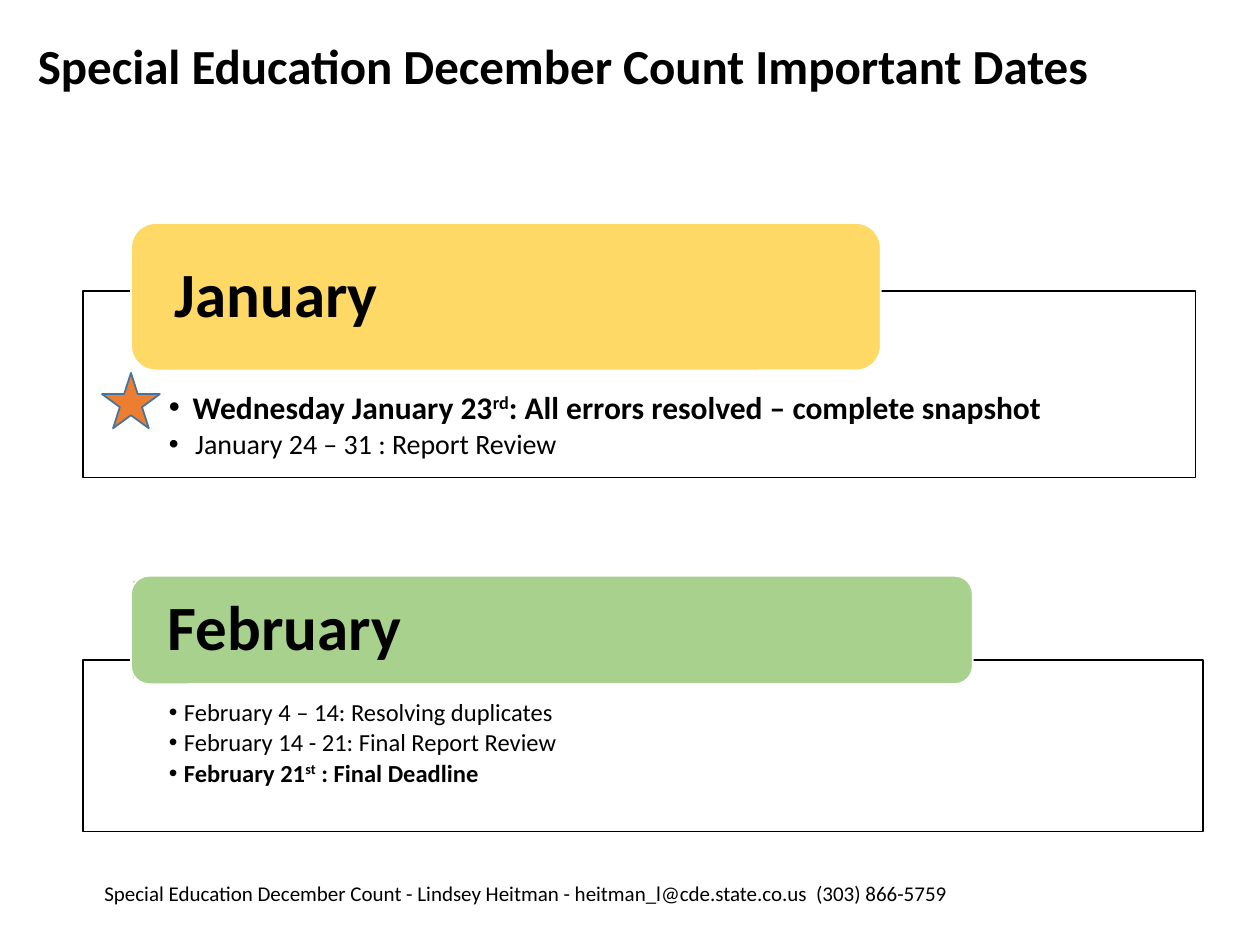
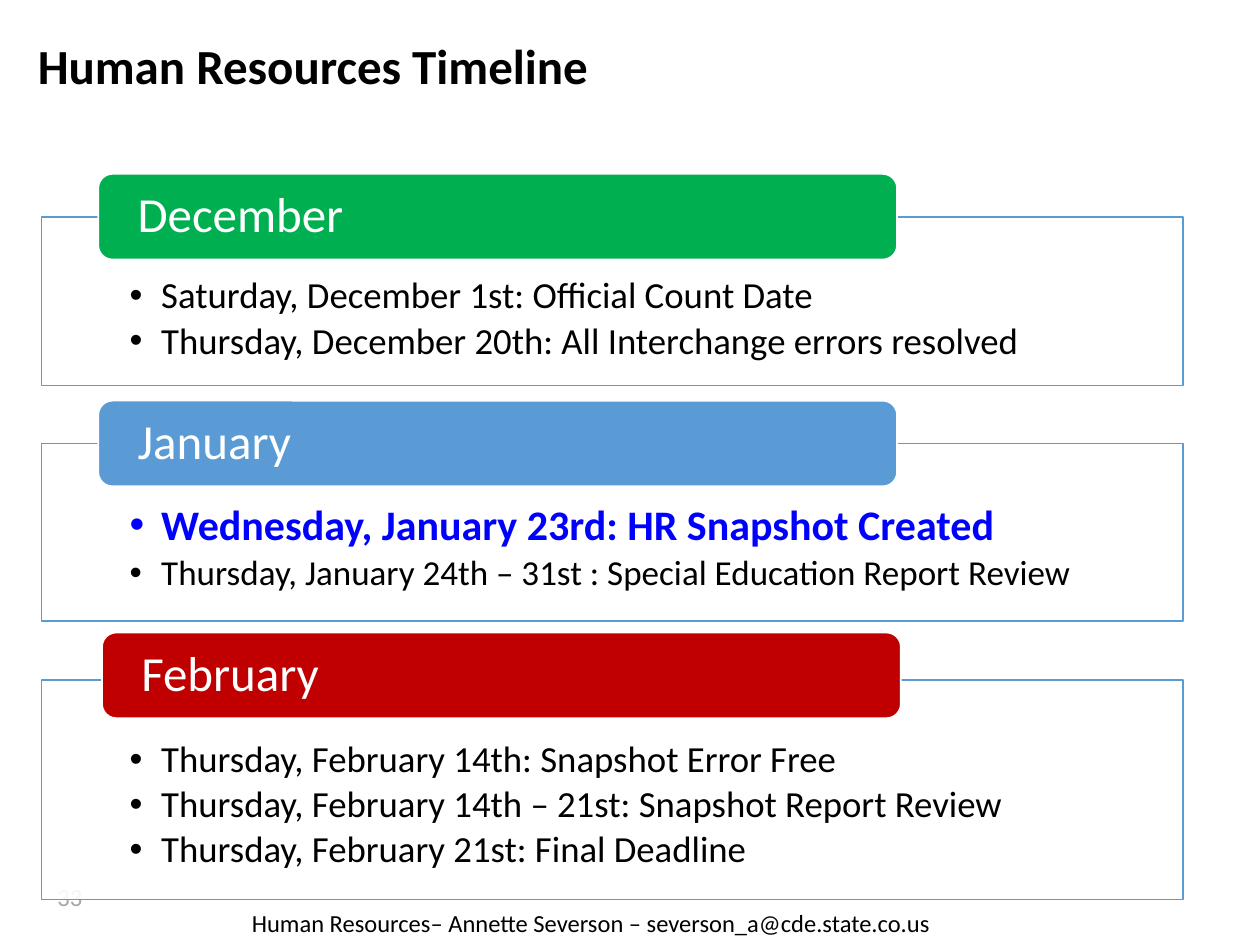
"""Build two month-by-month timeline slides."""
from lxml import etree
from pptx import Presentation
from pptx.dml.color import RGBColor
from pptx.enum import shapes, text
from pptx.oxml import ns
from pptx.util import Inches, Pt

FONT = "Calibri"
BLACK, WHITE, GREY = "000000", "FFFFFF", "A6A6A6"
BLUE, BRIGHT_BLUE, DARK_BLUE = "5B9BD5", "0000FF", "43739E"
YELLOW, LIGHT_GREEN, ORANGE = "FFD966", "A9D18E", "ED7D31"
GREEN, RED = "00B050", "C00000"
KIND = shapes.MSO_SHAPE
LEFT, CENTER = text.PP_ALIGN.LEFT, text.PP_ALIGN.CENTER
TOP, MIDDLE = text.MSO_ANCHOR.TOP, text.MSO_ANCHOR.MIDDLE


def color(hex_code):
    return RGBColor.from_string(hex_code)


def add_span(para, words, size, ink=BLACK, bold=False, raised=False):
    span = para.add_run()
    span.text = words
    span.font.name, span.font.size, span.font.bold = FONT, Pt(size), bold
    span.font.color.rgb = color(ink)
    if raised:
        span._r.get_or_add_rPr().set("baseline", "30000")


def set_frame(box, left=0.1, top=0.05, right=0.1, bottom=0.05, anchor=TOP):
    frame = box.text_frame
    frame.margin_left, frame.margin_top = Inches(left), Inches(top)
    frame.margin_right, frame.margin_bottom = Inches(right), Inches(bottom)
    frame.vertical_anchor = anchor
    frame.word_wrap = True
    return frame


def add_shape(page, kind, place, fill, line=None):
    shape = page.shapes.add_shape(kind, *map(Inches, place))
    shape.shadow.inherit = False
    shape.fill.solid()
    shape.fill.fore_color.rgb = color(fill)
    if line:
        shape.line.color.rgb = color(line)
        shape.line.width = Pt(1)
    else:
        shape.line.fill.background()
    return shape


def add_title(page, words):
    title = page.shapes.title
    title.left, title.top = Inches(0.3), Inches(0.28)
    title.width, title.height = Inches(9.58), Inches(0.78)
    frame = set_frame(title, 0, 0, 0, 0)
    frame.auto_size = text.MSO_AUTO_SIZE.NONE
    para = frame.paragraphs[0]
    para.alignment = LEFT
    add_span(para, words, 28, bold=True)


def add_label(page, place, words, size, ink=BLACK, align=LEFT):
    box = page.shapes.add_textbox(*map(Inches, place))
    para = set_frame(box).paragraphs[0]
    para.alignment = align
    add_span(para, words, size, ink)


def add_bullet(para, indent):
    props = para._p.get_or_add_pPr()
    props.set("marL", str(Inches(indent)))
    props.set("indent", str(-Inches(indent)))
    etree.SubElement(props, ns.qn("a:buFont")).set("typeface", "Arial")
    etree.SubElement(props, ns.qn("a:buChar")).set("char", "•")


def add_date_list(page, place, line, inset, items):
    """Draw an outlined panel; each item is (indent, size, style, words...)."""
    panel = add_shape(page, KIND.RECTANGLE, place, WHITE, line)
    tint = panel.fill._xPr.find(".//" + ns.qn("a:srgbClr"))
    etree.SubElement(tint, ns.qn("a:alpha")).set("val", "90000")
    frame = set_frame(panel, *inset)
    for index, (indent, size, style, *parts) in enumerate(items):
        para = frame.add_paragraph() if index else frame.paragraphs[0]
        para.alignment = LEFT
        para.line_spacing = 0.9
        para.space_after = Pt(0.15 * size)
        add_bullet(para, indent)
        for position, words in enumerate(parts):
            add_span(para, words, size, raised=position == 1, **style)


def add_month(page, place, fill, words, size, inset, **style):
    tab = add_shape(page, KIND.ROUNDED_RECTANGLE, place, fill, WHITE)
    para = set_frame(tab, inset, 0, inset, 0, MIDDLE).paragraphs[0]
    para.alignment = LEFT
    para.line_spacing = 0.9
    add_span(para, words, size, **style)


def build_count_dates(page):
    add_title(page, "Special Education December Count Important Dates")
    bold = {"bold": True}
    add_date_list(page, (0.66, 2.31, 8.83, 1.48), BLACK, (0.68, 0.8, 0.68, 0.14), [
        (0.19, 18, bold, "Wednesday January 23", "rd",
         ": All errors resolved – complete snapshot"),
        (0.21, 16, {}, "January 24 – 31 : Report Review"),
    ])
    add_month(page, (1.04, 1.77, 5.95, 1.17), YELLOW, "January", 36, 0.29, bold=True)
    add_date_list(page, (0.66, 5.24, 8.89, 1.36), BLACK, (0.68, 0.32, 0.68, 0.09), [
        (0.12, 14, {}, "February 4 – 14: Resolving duplicates"),
        (0.12, 14, {}, "February 14 - 21: Final Report Review"),
        (0.12, 14, bold, "February 21", "st", " : Final Deadline"),
    ])
    add_shape(page, KIND.RECTANGLE, (1.06, 4.61, 6.63, 0.77), LIGHT_GREEN)
    add_month(page, (1.04, 4.57, 6.68, 0.86), LIGHT_GREEN, "February", 36, 0.25, bold=True)
    add_shape(page, KIND.STAR_5_POINT, (0.81, 2.96, 0.46, 0.44), ORANGE, DARK_BLUE)
    add_label(page, (0.73, 6.94, 8.9, 0.3),
              "Special Education December Count - Lindsey Heitman - "
              "heitman_l@cde.state.co.us  (303) 866-5759", 12)


def build_hr_timeline(page):
    add_title(page, "Human Resources Timeline")
    add_label(page, (0.3, 6.95, 0.51, 0.4), "33", 14, GREY, CENTER)
    key_date = {"ink": BRIGHT_BLUE, "bold": True}
    months = [
        ("December", GREEN, 0.78, 1.38, 1.72, 1.34, [
            (21, {}, "Saturday, December 1st: Official Count Date"),
            (21, {}, "Thursday, December 20th: All Interchange errors resolved")]),
        ("January", BLUE, 0.78, 3.18, 3.52, 1.41, [
            (24, key_date, "Wednesday, January 23rd: HR Snapshot Created"),
            (20, {}, "Thursday, January 24th – 31st : Special Education Report Review")]),
        ("February", RED, 0.81, 5.02, 5.4, 1.74, [
            (21, {}, "Thursday, February 14th: Snapshot Error Free"),
            (21, {}, "Thursday, February 14th – 21st: Snapshot Report Review"),
            (21, {}, "Thursday, February 21st: Final Deadline")]),
    ]
    for month, fill, left, tab_top, panel_top, height, dates in months:
        add_date_list(page, (0.33, panel_top, 9.06, height), BLUE,
                      (0.7, 0.48, 0.7, 0.16), [(0.25, *date) for date in dates])
        add_month(page, (left, tab_top, 6.34, 0.68), fill, month, 28, 0.28, ink=WHITE)
    add_label(page, (1.9, 7.16, 5.64, 0.34),
              "Human Resources– Annette Severson – severson_a@cde.state.co.us", 14)


def main():
    deck = Presentation()
    deck.slide_width, deck.slide_height = Inches(10), Inches(7.5)
    title_only = deck.slide_layouts.get_by_name("Title Only")
    for build in (build_count_dates, build_hr_timeline):
        build(deck.slides.add_slide(title_only))
    deck.save("out.pptx")


if __name__ == "__main__":
    main()
